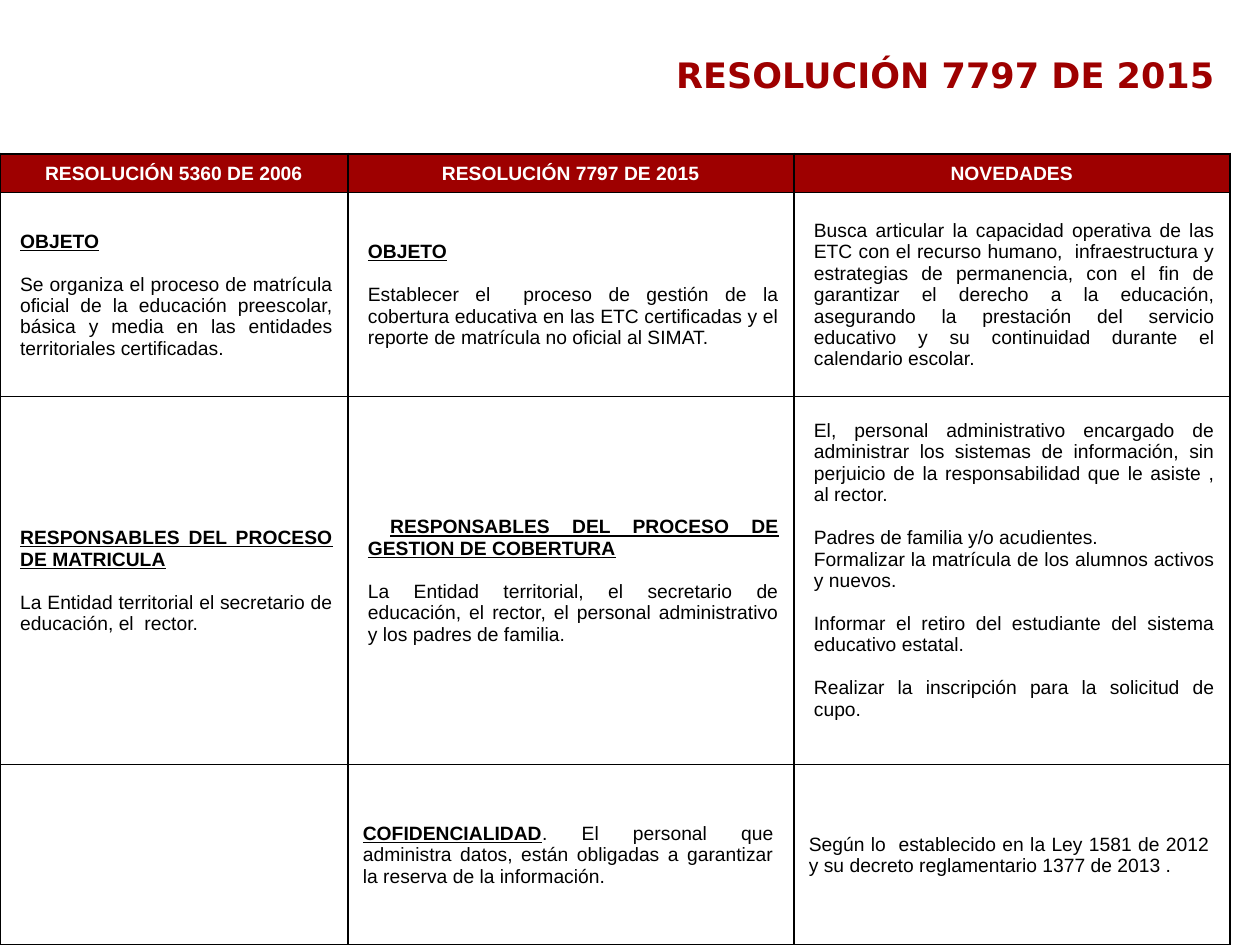
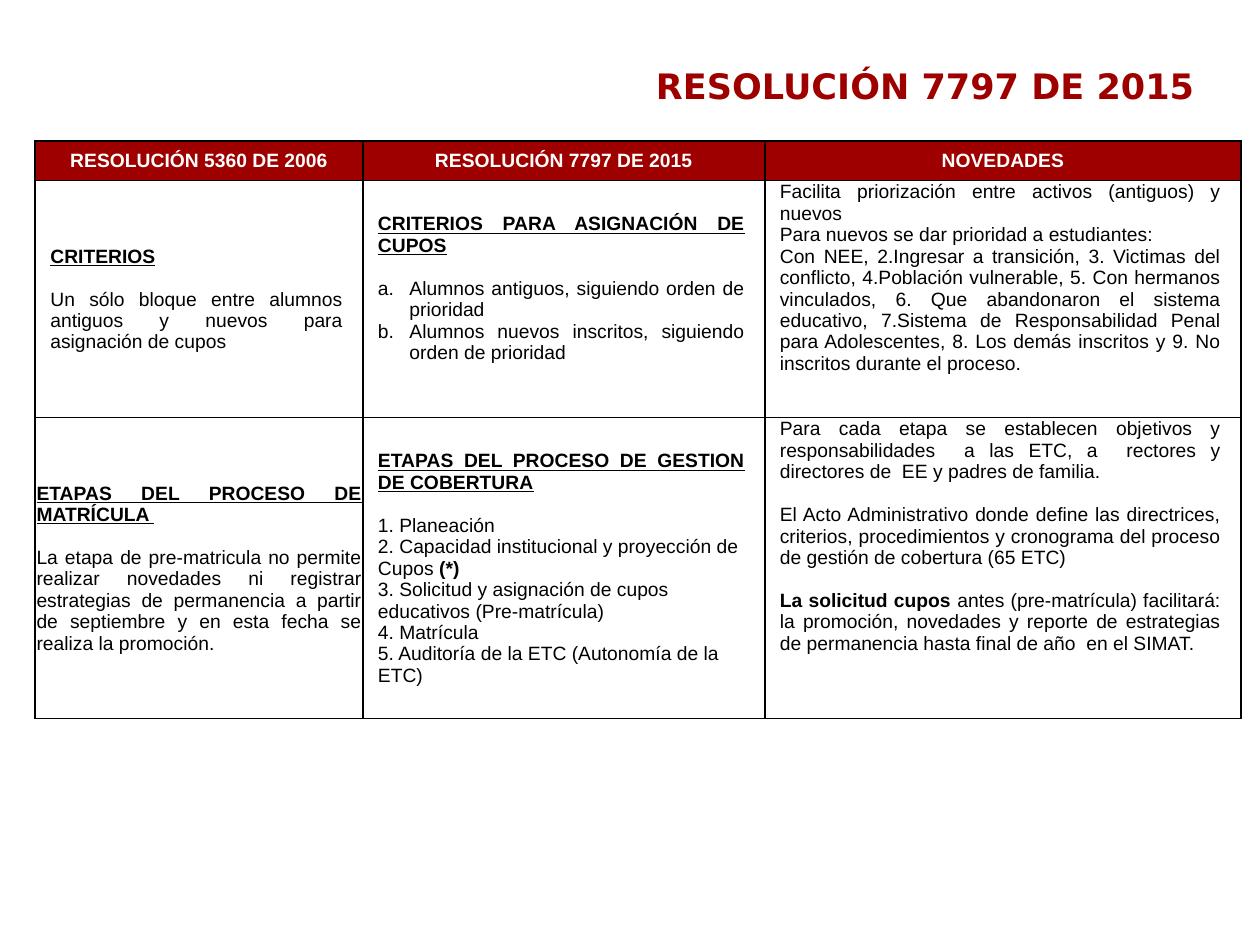
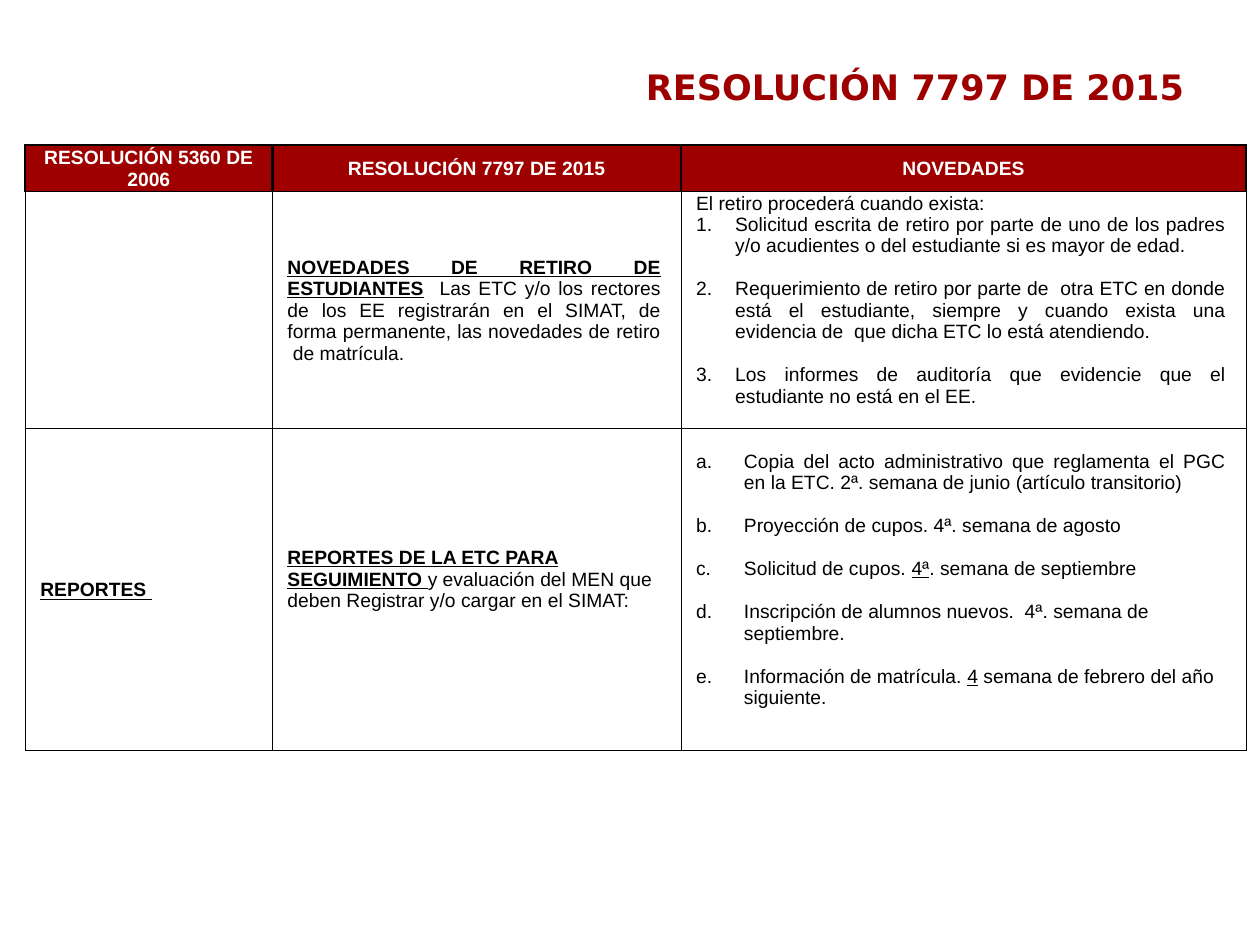
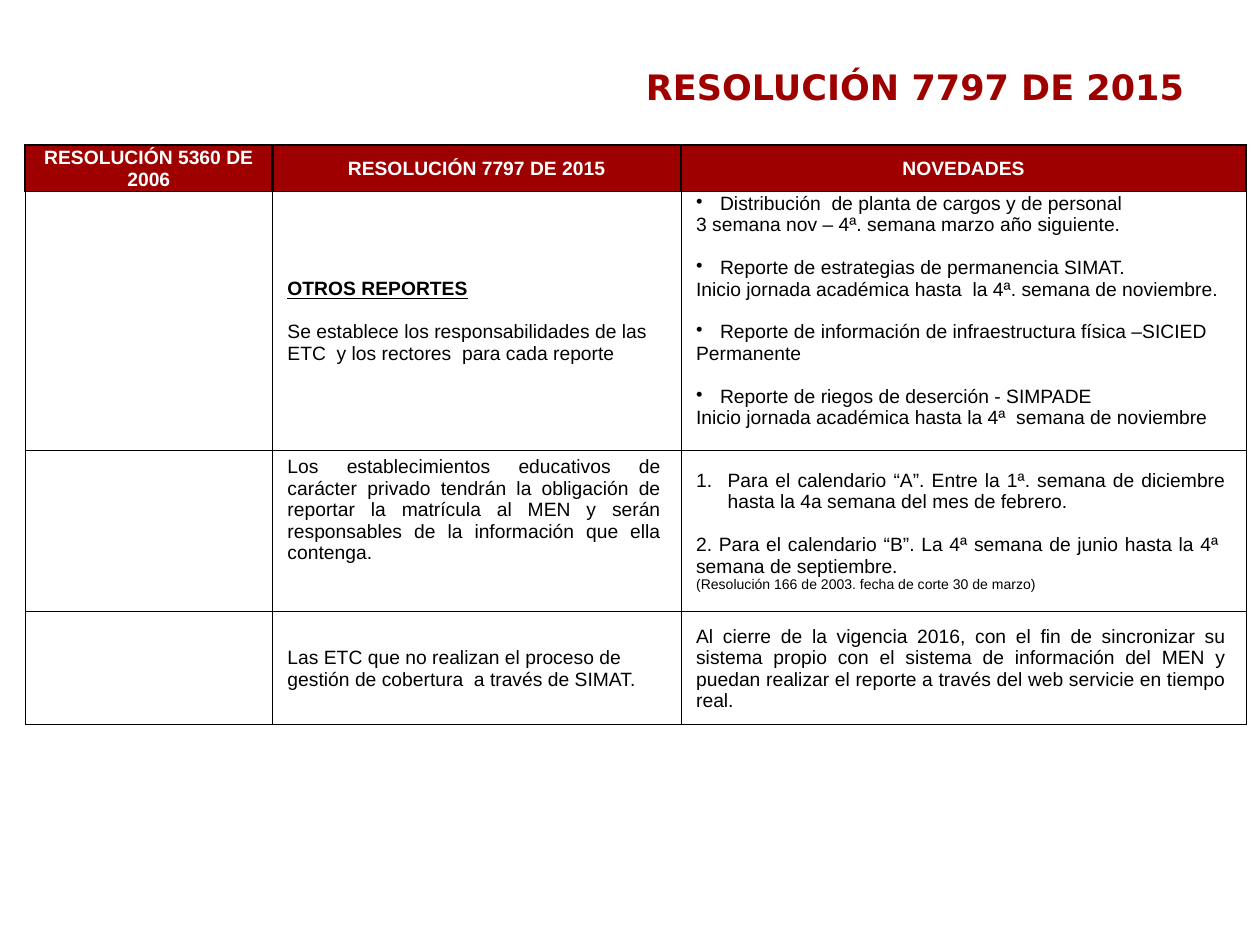
from dataclasses import dataclass

from lxml.etree import SubElement
from pptx import Presentation
from pptx.dml.color import RGBColor
from pptx.enum.text import MSO_ANCHOR, MSO_AUTO_SIZE, PP_ALIGN
from pptx.oxml.ns import qn
from pptx.util import Inches, Pt


@dataclass(frozen=True)
class Theme:
    red: RGBColor = RGBColor(0x9E, 0x00, 0x00)
    white: RGBColor = RGBColor(0xFF, 0xFF, 0xFF)
    black: RGBColor = RGBColor(0x00, 0x00, 0x00)
    title_font: str = "DejaVu Sans"
    body_font: str = "Arial"
    title_size: float = 20
    body_size: float = 11
    note_size: float = 8
    gap: float = 12.3
    line_height: float = 0.17
    thick: float = 1.5
    thin: float = 0.5


@dataclass(frozen=True)
class Box:
    left: float
    top: float
    width: float
    height: float


@dataclass(frozen=True)
class Span:
    text: str
    bold: bool = False
    underline: bool = False
    size: float = Theme.body_size


@dataclass(frozen=True)
class ListStyle:
    tag: str
    attribute: str
    value: str
    indent: float


@dataclass(frozen=True)
class Line:
    spans: tuple
    gap: bool = False
    align: PP_ALIGN = PP_ALIGN.JUSTIFY
    list_style: ListStyle = None


@dataclass(frozen=True)
class Cell:
    """Lines of a cell; lines_above and lines_below widen its margins by whole text lines."""
    lines: tuple = ()
    margins: tuple = (0.12, 0.16)
    anchor: MSO_ANCHOR = MSO_ANCHOR.MIDDLE
    lines_above: int = 0
    lines_below: int = 0


THEME = Theme()
TITLE = "RESOLUCIÓN 7797 DE 2015"
HEADERS = ("RESOLUCIÓN 5360 DE 2006", TITLE, "NOVEDADES")
TITLE_WIDTH, TITLE_HEIGHT = 6.31, 0.77
WIDE = (0.16, 0.12)
NARROW = (0.01, 0.01)
LEFT = PP_ALIGN.LEFT

LETTERS = ListStyle("a:buAutoNum", "type", "alphaLcPeriod", 0.25)
REPORT_LETTERS = ListStyle("a:buAutoNum", "type", "alphaLcPeriod", 0.38)
NUMBERS = ListStyle("a:buAutoNum", "type", "arabicPeriod", 0.25)
WITHDRAWAL_NUMBERS = ListStyle("a:buAutoNum", "type", "arabicPeriod", 0.31)
DOTS = ListStyle("a:buChar", "char", "•", 0.19)


def line(*spans, **options):
    return Line(tuple(Span(span) if isinstance(span, str) else span for span in spans), **options)


def cell(*lines, **options):
    """Plain strings become justified lines."""
    return Cell(tuple(line(item) if isinstance(item, str) else item for item in lines), **options)


def heading(text):
    return Span(text, bold=True, underline=True)


def topic(title, text, **options):
    """A heading and, one line lower, its explanation."""
    return cell(line(heading(title)), line(text, gap=True), **options)


def left_line(*spans, **options):
    return line(*spans, align=LEFT, **options)


def report(name, date, gap=True):
    return left_line(name, gap=gap, list_style=DOTS), left_line(date)


def write_span(paragraph, span, font_name, color):
    run = paragraph.add_run()
    run.text = span.text
    run.font.name = font_name
    run.font.size = Pt(span.size)
    run.font.bold = span.bold
    run.font.underline = span.underline
    run.font.color.rgb = color


def set_list_style(paragraph, list_style):
    properties = paragraph._p.get_or_add_pPr()
    properties.set("marL", str(Inches(list_style.indent)))
    properties.set("indent", str(-Inches(list_style.indent)))
    SubElement(properties, qn(list_style.tag)).set(list_style.attribute, list_style.value)


def write_lines(text_frame, lines, color):
    for index, content in enumerate(lines):
        paragraph = text_frame.add_paragraph() if index else text_frame.paragraphs[0]
        paragraph.alignment = content.align
        if content.list_style:
            set_list_style(paragraph, content.list_style)
        if content.gap:
            paragraph.space_before = Pt(THEME.gap)
        for span in content.spans:
            write_span(paragraph, span, THEME.body_font, color)


def set_borders(table_cell, left, right, top, bottom):
    properties = table_cell._tc.get_or_add_tcPr()
    for side, width in zip("LRTB", (left, right, top, bottom)):
        border = SubElement(properties, qn(f"a:ln{side}"), w=str(Pt(width)))
        fill = SubElement(border, qn("a:solidFill"))
        SubElement(fill, qn("a:srgbClr"), val=str(THEME.black))


def fill_cell(table_cell, content, color):
    table_cell.vertical_anchor = content.anchor
    table_cell.margin_left, table_cell.margin_right = map(Inches, content.margins)
    table_cell.margin_top = Inches(0.01 + content.lines_above * THEME.line_height)
    table_cell.margin_bottom = Inches(content.lines_below * THEME.line_height)
    write_lines(table_cell.text_frame, content.lines, color)


def add_title(slide, box):
    title = slide.shapes.title
    title.left, title.top = Inches(box.left), Inches(box.top)
    title.width, title.height = Inches(box.width), Inches(box.height)
    frame = title.text_frame
    frame.auto_size = MSO_AUTO_SIZE.NONE
    frame.vertical_anchor = MSO_ANCHOR.MIDDLE
    paragraph = frame.paragraphs[0]
    paragraph.alignment = PP_ALIGN.RIGHT
    write_span(paragraph, Span(TITLE, bold=True, size=THEME.title_size), THEME.title_font, THEME.red)


def add_comparison(slide, box, column_weights, row_weights, rows, side_border):
    """Share the box among columns and rows by weight, with the header row first."""
    table = slide.shapes.add_table(len(rows) + 1, len(HEADERS), Inches(box.left), Inches(box.top),
                                   Inches(box.width), Inches(box.height)).table
    table.first_row = table.horz_banding = False
    for column, weight in zip(table.columns, column_weights):
        column.width = Inches(box.width * weight / sum(column_weights))
    for row, weight in zip(table.rows, row_weights):
        row.height = Inches(box.height * weight / sum(row_weights))

    for index, label in enumerate(HEADERS):
        header = table.cell(0, index)
        set_borders(header, THEME.thick, THEME.thick, THEME.thick, THEME.thin)
        header.fill.solid()
        header.fill.fore_color.rgb = THEME.red
        label_line = line(Span(label, bold=True), align=PP_ALIGN.CENTER)
        fill_cell(header, cell(label_line, margins=NARROW), THEME.white)

    for row_index, row in enumerate(rows, start=1):
        for column_index, content in enumerate(row):
            body = table.cell(row_index, column_index)
            set_borders(body, side_border, side_border, THEME.thin, THEME.thin)
            body.fill.background()
            fill_cell(body, content, THEME.black)


def add_comparison_slide(presentation, title_at, box, column_weights, row_weights, rows,
                         side_border=THEME.thin):
    slide = presentation.slides.add_slide(presentation.slide_layouts[5])
    add_title(slide, Box(*title_at, TITLE_WIDTH, TITLE_HEIGHT))
    add_comparison(slide, box, column_weights, row_weights, rows, side_border)


PURPOSE_ROWS = (
    (
        topic("OBJETO", "Se organiza el proceso de matrícula oficial de la educación preescolar, "
              "básica y media en las entidades territoriales certificadas.", margins=WIDE),
        topic("OBJETO", "Establecer el  proceso de gestión de la cobertura educativa en las ETC "
              "certificadas y el reporte de matrícula no oficial al SIMAT.", margins=WIDE),
        cell("Busca articular la capacidad operativa de las ETC con el recurso humano,  "
             "infraestructura y estrategias de permanencia, con el fin de garantizar el derecho a "
             "la educación, asegurando la prestación del servicio educativo y su continuidad "
             "durante el calendario escolar.", margins=WIDE),
    ),
    (
        topic("RESPONSABLES DEL PROCESO DE MATRICULA",
              "La Entidad territorial el secretario de educación, el  rector.", margins=WIDE),
        cell(line(Span(" ", bold=True), heading("RESPONSABLES DEL PROCESO DE GESTION DE COBERTURA")),
             line("La Entidad territorial, el secretario de educación, el rector, el personal "
                  "administrativo y los padres de familia.", gap=True), margins=WIDE),
        cell("El, personal administrativo encargado de administrar los sistemas de información, "
             "sin perjuicio de la responsabilidad que le asiste , al rector.",
             line("Padres de familia y/o acudientes. ", gap=True),
             "Formalizar la matrícula de los alumnos activos y nuevos.",
             line("Informar el retiro del estudiante del sistema educativo estatal.", gap=True),
             line("Realizar la inscripción para la solicitud de cupo. ", gap=True),
             margins=WIDE, lines_below=1),
    ),
    (
        cell(),
        cell(line(heading("COFIDENCIALIDAD"), ". El personal que administra datos, están obligadas "
                  "a garantizar la reserva de la información.")),
        cell("Según lo  establecido en la Ley 1581 de 2012 y su decreto reglamentario 1377 de 2013 ."),
    ),
)

CRITERIA_ROWS = (
    (
        topic("CRITERIOS", "Un sólo bloque entre alumnos antiguos y nuevos para asignación de cupos"),
        cell(line(heading("CRITERIOS PARA ASIGNACIÓN DE CUPOS")),
             line("Alumnos antiguos, siguiendo orden de prioridad", gap=True, list_style=LETTERS),
             line("Alumnos nuevos inscritos, siguiendo orden de prioridad", list_style=LETTERS),
             lines_below=1),
        cell("Facilita priorización entre activos (antiguos) y nuevos",
             "Para nuevos se dar prioridad a estudiantes: ",
             "Con NEE, 2.Ingresar a transición, 3. Victimas del conflicto, 4.Población vulnerable, "
             "5. Con hermanos vinculados, 6. Que abandonaron el sistema educativo, 7.Sistema de "
             "Responsabilidad Penal para Adolescentes, 8. Los demás inscritos y 9. No inscritos "
             "durante el proceso.", lines_below=2),
    ),
    (
        topic("ETAPAS DEL PROCESO DE MATRÍCULA ",
              "La etapa de pre-matricula no permite realizar novedades ni registrar estrategias de "
              "permanencia a partir de septiembre y en esta fecha se realiza la promoción.",
              margins=NARROW),
        cell(line(heading("ETAPAS DEL PROCESO DE GESTION DE COBERTURA")),
             left_line("1. Planeación", gap=True),
             left_line("2. Capacidad institucional y proyección de Cupos ", Span("(*)", bold=True)),
             left_line("3. Solicitud y asignación de cupos educativos (Pre-matrícula)"),
             left_line("4. Matrícula"),
             left_line("5. Auditoría de la ETC (Autonomía de la ETC)")),
        cell("Para cada etapa se establecen objetivos y responsabilidades  a las ETC, a  rectores y "
             "directores de  EE y padres de familia.",
             line("El Acto Administrativo donde define las directrices, criterios, procedimientos y "
                  "cronograma del proceso de gestión de cobertura (65 ETC)", gap=True),
             line(Span("La solicitud cupos ", bold=True),
                  "antes (pre-matrícula) facilitará: la promoción, novedades y reporte de "
                  "estrategias de permanencia hasta final de año  en el SIMAT.", gap=True),
             lines_below=3),
    ),
)

WITHDRAWAL_ROWS = (
    (
        cell(),
        cell(line(heading("NOVEDADES DE RETIRO DE ESTUDIANTES"), Span("  ", bold=True),
                  "Las ETC y/o los rectores de los EE registrarán en el SIMAT, de forma permanente, "
                  "las novedades de retiro  de matrícula.")),
        cell("El retiro procederá cuando exista:",
             line("Solicitud escrita de retiro por parte de uno de los padres y/o acudientes o del "
                  "estudiante si es mayor de edad.", list_style=WITHDRAWAL_NUMBERS),
             line("Requerimiento de retiro por parte de  otra ETC en donde está el estudiante, "
                  "siempre y cuando exista una evidencia de  que dicha ETC lo está atendiendo.",
                  gap=True, list_style=WITHDRAWAL_NUMBERS),
             line("Los informes de auditoría que evidencie que el estudiante no está en el EE.",
                  gap=True, list_style=WITHDRAWAL_NUMBERS),
             anchor=MSO_ANCHOR.TOP),
    ),
    (
        cell(line(heading("REPORTES "))),
        cell(left_line(heading("REPORTES DE LA ETC PARA SEGUIMIENTO "),
                       "y evaluación del MEN que deben Registrar y/o cargar en el SIMAT:"),
             lines_below=1),
        cell(line("Copia del acto administrativo que reglamenta el PGC en la ETC. 2ª. semana de "
                  "junio (artículo transitorio)", list_style=REPORT_LETTERS),
             line("Proyección de cupos. 4ª. semana de agosto", gap=True, list_style=REPORT_LETTERS),
             left_line("Solicitud de cupos. ", Span("4ª", underline=True), ". semana de septiembre",
                       gap=True, list_style=REPORT_LETTERS),
             left_line("Inscripción de alumnos nuevos.  4ª. semana de septiembre.",
                       gap=True, list_style=REPORT_LETTERS),
             left_line("Información de matrícula. ", Span("4", underline=True),
                       " semana de febrero del año siguiente.", gap=True, list_style=REPORT_LETTERS),
             anchor=MSO_ANCHOR.TOP, lines_above=1),
    ),
)

OTHER_REPORT_ROWS = (
    (
        cell(),
        cell(left_line(heading("OTROS REPORTES")),
             left_line("Se establece los responsabilidades de las ETC  y los rectores  para cada "
                       "reporte", gap=True)),
        cell(*report("Distribución  de planta de cargos y de personal",
                     "3 semana nov – 4ª. semana marzo año siguiente.", gap=False),
             *report("Reporte de estrategias de permanencia SIMAT.",
                     "Inicio jornada académica hasta  la 4ª. semana de noviembre."),
             *report("Reporte de información de infraestructura física –SICIED", "Permanente"),
             *report("Reporte de riegos de deserción - SIMPADE",
                     "Inicio jornada académica hasta la 4ª  semana de noviembre"),
             lines_below=1),
    ),
    (
        cell(),
        cell("Los establecimientos educativos de carácter privado tendrán la obligación de reportar "
             "la matrícula al MEN y serán responsables de la información que ella contenga.",
             lines_below=2),
        cell(line("Para el calendario “A”. Entre la 1ª. semana de diciembre hasta la 4a semana del "
                  "mes de febrero.", list_style=NUMBERS),
             line("2. Para el calendario “B”. La 4ª semana de junio hasta la 4ª  semana de "
                  "septiembre.", gap=True),
             line(Span("(Resolución 166 de 2003. fecha de corte 30 de marzo)",
                       size=THEME.note_size))),
    ),
    (
        cell(),
        cell(left_line("Las ETC que no realizan el proceso de gestión de cobertura  a través de "
                       "SIMAT.")),
        cell("Al cierre de la vigencia 2016, con el fin de sincronizar su sistema propio con el "
             "sistema de información del MEN y puedan realizar el reporte a través del web servicie "
             "en tiempo real."),
    ),
)


def main():
    presentation = Presentation()
    presentation.slide_width, presentation.slide_height = Inches(10), Inches(7.5)
    add_comparison_slide(presentation, (3.43, 0.21), Box(0, 1.22, 9.76, 6.28),
                         (2.76, 3.54, 3.46), (0.31, 1.61, 2.92, 1.43), PURPOSE_ROWS, THEME.thick)
    add_comparison_slide(presentation, (3.27, 0.29), Box(0.28, 1.12, 9.57, 4.58),
                         (2.6, 3.19, 3.78), (0.31, 1.88, 2.39), CRITERIA_ROWS, THEME.thick)
    report_columns = (1.96, 3.24, 4.48)
    add_comparison_slide(presentation, (3.19, 0.3), Box(0.2, 1.15, 9.69, 4.81),
                         report_columns, (0.37, 1.88, 2.56), WITHDRAWAL_ROWS)
    add_comparison_slide(presentation, (3.19, 0.3), Box(0.2, 1.15, 9.69, 4.6),
                         report_columns, (0.37, 2.05, 1.28, 0.9), OTHER_REPORT_ROWS)
    presentation.save("out.pptx")


if __name__ == "__main__":
    main()
